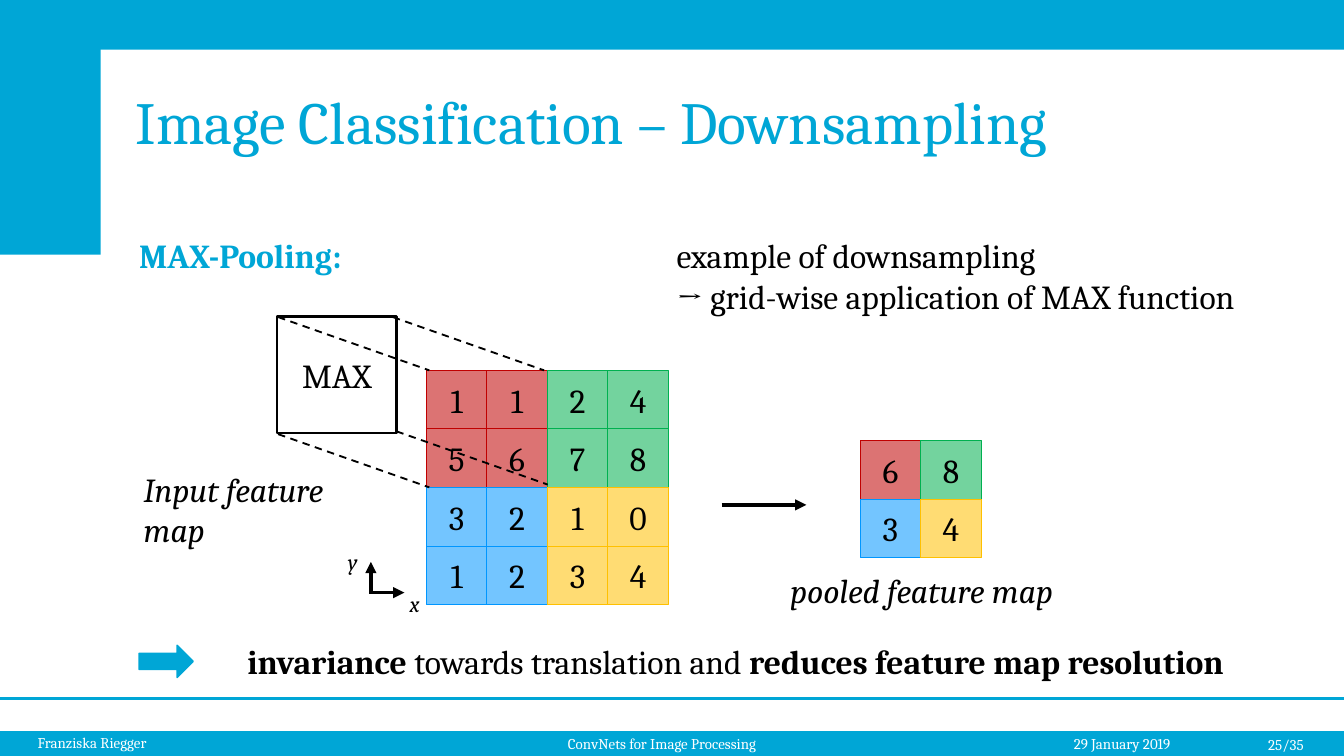
from dataclasses import dataclass
from itertools import product
from typing import Any, NamedTuple

from lxml import etree
from pptx import Presentation
from pptx import util as u
from pptx.dml import color
from pptx.enum import dml, shapes, text
from pptx.oxml import ns

CYAN = color.RGBColor(0x00, 0xA6, 0xD6)
BLACK = color.RGBColor(0x00, 0x00, 0x00)
WHITE = color.RGBColor(0xFF, 0xFF, 0xFF)
RED = color.RGBColor(0xC0, 0x00, 0x00)
GREEN = color.RGBColor(0x00, 0xB0, 0x50)
BLUE = color.RGBColor(0x00, 0x96, 0xFF)
YELLOW = color.RGBColor(0xFF, 0xC0, 0x00)

CELL_W, CELL_H = 32.4, 31.4
POOL = 2
TAB_STOP = 288
QUADRANTS = ((RED, GREEN), (BLUE, YELLOW))
FEATURE_MAP = ((1, 1, 2, 4), (5, 6, 7, 8), (3, 2, 1, 0), (1, 2, 3, 4))
POOLED_MAP = tuple(
    tuple(
        max(FEATURE_MAP[POOL * row + i][POOL * col + j]
            for i, j in product(range(POOL), repeat=2))
        for col in range(POOL)
    )
    for row in range(POOL)
)


class Box(NamedTuple):
    left: float
    top: float
    width: float
    height: float


class Run(NamedTuple):
    words: str
    bold: bool = False
    ink: color.RGBColor = BLACK


@dataclass(frozen=True)
class Label:
    box: Box
    lines: tuple[tuple[Run, ...], ...]
    size: float = 18
    italic: bool = False
    inset: float = 0
    align: text.PP_ALIGN = text.PP_ALIGN.LEFT
    anchor: text.MSO_ANCHOR = text.MSO_ANCHOR.TOP


@dataclass(frozen=True)
class Stroke:
    start: tuple[float, float]
    end: tuple[float, float]
    weight: float = 2
    ink: color.RGBColor = BLACK
    dashed: bool = False
    arrow: bool = False


def points(values: tuple[float, ...]) -> list[u.Length]:
    return [u.Pt(value) for value in values]


def write_run(paragraph: Any, run: Run, size: float, italic: bool = False) -> None:
    piece = paragraph.add_run()
    piece.text = run.words
    formats = {"name": "Cambria", "size": u.Pt(size), "bold": run.bold, "italic": italic}
    for attribute, value in formats.items():
        setattr(piece.font, attribute, value)
    piece.font.color.rgb = run.ink


def draw_label(canvas: Any, label: Label) -> None:
    textbox = canvas.add_textbox(*points(label.box))
    frame = textbox.text_frame
    formats = {"word_wrap": True, "vertical_anchor": label.anchor}
    if label.inset == 0:
        sides = ("left", "top", "right", "bottom")
        formats |= {f"margin_{side}": u.Pt(0) for side in sides}
    for attribute, value in formats.items():
        setattr(frame, attribute, value)
    for number, line in enumerate(label.lines):
        paragraph = frame.add_paragraph() if number else frame.paragraphs[0]
        paragraph.alignment = label.align
        for run in line:
            write_run(paragraph, run, label.size, label.italic)
    if any("\t" in run.words for line in label.lines for run in line):
        for properties in textbox.element.iter(ns.qn("a:pPr")):
            tabs = etree.SubElement(properties, ns.qn("a:tabLst"))
            etree.SubElement(tabs, ns.qn("a:tab"), pos=str(u.Pt(TAB_STOP)), algn="l")


def draw_block(canvas: Any, box: Box, fill: color.RGBColor | None = None,
               kind: shapes.MSO_SHAPE = shapes.MSO_SHAPE.RECTANGLE,
               edge: color.RGBColor | None = None, weight: float = 0.5,
               words: str = "", opacity: int = 100) -> None:
    block = canvas.add_shape(kind, *points(box))
    block.shadow.inherit = False
    if fill is None:
        block.fill.background()
    else:
        block.fill.solid()
        block.fill.fore_color.rgb = fill
        if opacity < 100:
            tint = block.element.spPr.find(ns.qn("a:solidFill"))[0]
            etree.SubElement(tint, ns.qn("a:alpha"), val=str(opacity * 1000))
    if edge is None:
        block.line.fill.background()
    else:
        block.line.color.rgb = edge
        block.line.width = u.Pt(weight)
    if words:
        block.text_frame.vertical_anchor = text.MSO_ANCHOR.MIDDLE
        paragraph = block.text_frame.paragraphs[0]
        paragraph.alignment = text.PP_ALIGN.CENTER
        write_run(paragraph, Run(words), 18)


def draw_stroke(canvas: Any, stroke: Stroke) -> None:
    connector = canvas.add_connector(
        shapes.MSO_CONNECTOR.STRAIGHT, *points(stroke.start + stroke.end))
    connector.line.color.rgb = stroke.ink
    connector.line.width = u.Pt(stroke.weight)
    if stroke.dashed:
        connector.line.dash_style = dml.MSO_LINE.DASH
    if stroke.arrow:
        etree.SubElement(connector.get_or_add_ln(), ns.qn("a:tailEnd"), type="triangle")
    etree.SubElement(connector.element.spPr, ns.qn("a:effectLst"))


def draw_map(canvas: Any, left: float, top: float,
             values: tuple[tuple[int, ...], ...]) -> None:
    span = len(values) // POOL
    for row, line in enumerate(values):
        for col, value in enumerate(line):
            tone = QUADRANTS[row // span][col // span]
            cell = Box(left + col * CELL_W, top + row * CELL_H, CELL_W, CELL_H)
            draw_block(canvas, cell, tone, edge=tone, words=str(value), opacity=55)


def footer(box: Box, words: str, **layout: Any) -> Label:
    return Label(box, ((Run(words, ink=WHITE),),), size=8, inset=7.2, **layout)


def axis_name(left: float, top: float, words: str) -> Label:
    return Label(Box(left, top, 17, 18), ((Run(words),),), 12, True, 7.2)


FRAME_LABELS = (
    footer(Box(13, 389.5, 132, 17), "Franziska Riegger"),
    footer(Box(297.2, 390.2, 125, 17), "ConvNets for Image Processing"),
    footer(Box(568.2, 390.2, 87, 17), "29 January 2019"),
    footer(Box(523.5, 388.3, 182, 21.6), "25/35",
           align=text.PP_ALIGN.RIGHT, anchor=text.MSO_ANCHOR.MIDDLE),
    Label(Box(65.5, 31, 633, 67.7), ((Run("Image Classification – Downsampling", ink=CYAN),),),
          size=32, inset=7.2, anchor=text.MSO_ANCHOR.MIDDLE),
)
CONTENT_LABELS = (
    Label(Box(74.5, 126, 621, 44), (
        (Run("MAX-Pooling:", True, CYAN), Run("\texample of downsampling")),
        (Run("\t→ grid-wise application of MAX function"),),
    )),
    Label(Box(132.5, 343.5, 540, 22), (
        (Run("invariance", True), Run(" towards translation and "),
         Run("reduces feature map resolution", True)),
    )),
    Label(Box(77, 251.3, 111, 44), ((Run("Input feature"),), (Run("map"),)), italic=True),
    Label(Box(423.4, 305.3, 152, 22), ((Run("pooled feature map"),),), italic=True),
)
AXES = (
    Stroke((198.7, 318.2), (198.7, 301), arrow=True),
    Stroke((198, 317.5), (216.7, 317.5), arrow=True),
)
AXIS_NAMES = (axis_name(212.4, 312.5, "x"), axis_name(179.3, 290.2, "y"))
PROJECTION_STARTS = ((149, 232.6), (212.4, 231.1), (149, 169.9), (210.5, 169.9))
PROJECTION = (81, 28.5)


def main() -> None:
    deck = Presentation()
    deck.slide_width, deck.slide_height = u.Pt(720), u.Pt(405)
    canvas = deck.slides.add_slide(deck.slide_layouts[6]).shapes

    for band in (Box(0, 391.7, 720, 13.3), Box(0, 0, 720, 26.7), Box(0, 0, 54, 136.5)):
        draw_block(canvas, band, CYAN)
    draw_stroke(canvas, Stroke((0, 374.2), (720, 374.2), ink=CYAN))
    for label in FRAME_LABELS + CONTENT_LABELS:
        draw_label(canvas, label)

    draw_map(canvas.add_group_shape().shapes, 460.8, 236, POOLED_MAP)
    feature_group = canvas.add_group_shape().shapes
    draw_map(feature_group, 228.4, 198.4, FEATURE_MAP)
    for axis in AXES:
        draw_stroke(feature_group, axis)
    for name in AXIS_NAMES:
        draw_label(feature_group, name)
    draw_stroke(canvas, Stroke((386.6, 270.5), (432, 270.5), arrow=True))

    max_group = canvas.add_group_shape().shapes
    draw_block(max_group, Box(148.3, 169.6, 64.2, 62.6), edge=BLACK, weight=1.25, words="MAX")
    for x, y in PROJECTION_STARTS:
        end = (x + PROJECTION[0], y + PROJECTION[1])
        draw_stroke(max_group, Stroke((x, y), end, weight=1, dashed=True))

    draw_block(canvas, Box(74.5, 345.7, 29, 17.3), CYAN,
               shapes.MSO_SHAPE.RIGHT_ARROW, CYAN, 0.75)
    deck.save("out.pptx")


if __name__ == "__main__":
    main()
